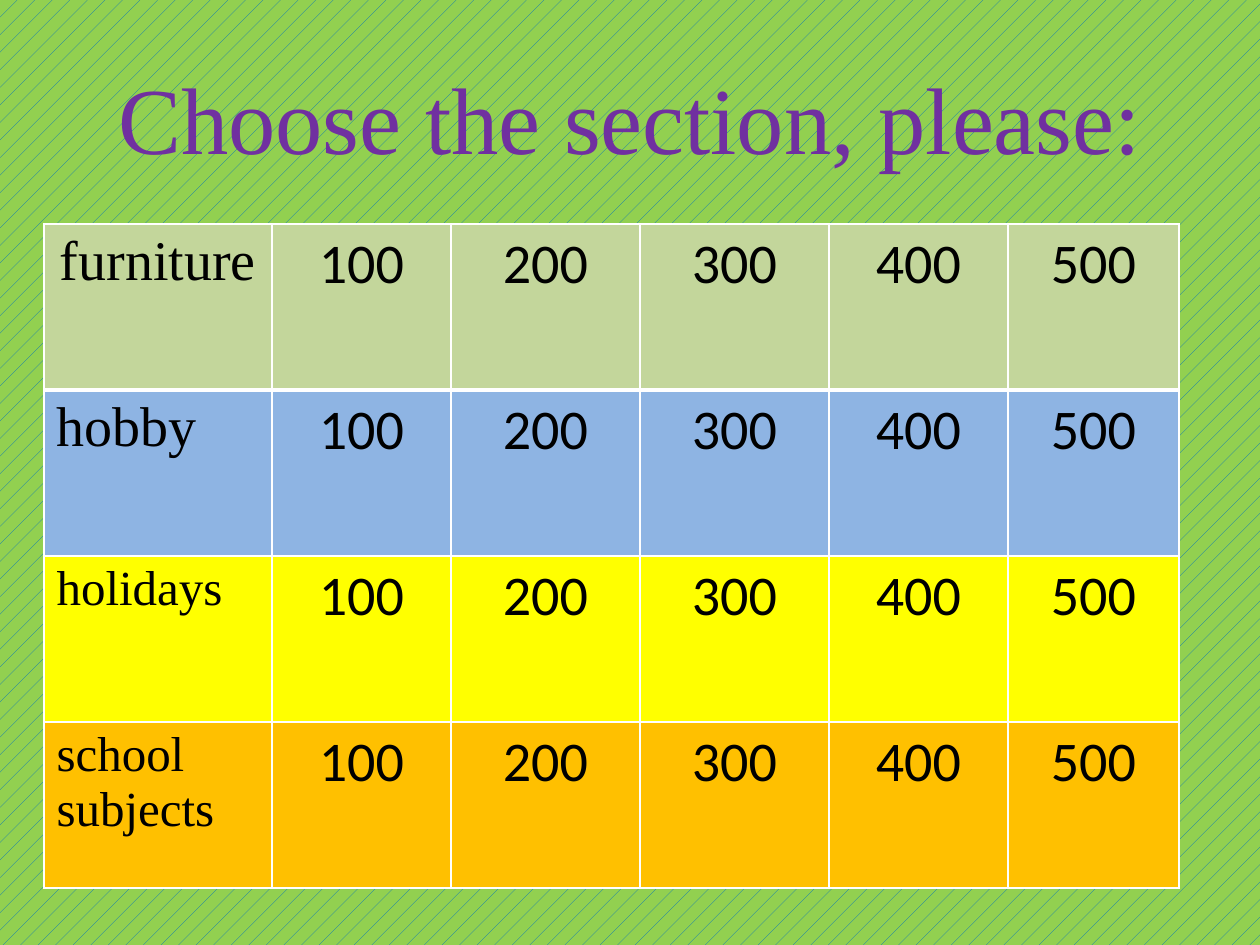
from dataclasses import dataclass

from lxml.etree import SubElement
from pptx import Presentation
from pptx.dml.color import RGBColor
from pptx.enum.dml import MSO_PATTERN
from pptx.enum.text import MSO_ANCHOR, PP_ALIGN
from pptx.oxml.ns import qn
from pptx.util import Emu, Pt

EMU_PER_PX = 914400 / 126


@dataclass(frozen=True)
class Theme:
    serif: str = "Times New Roman"
    sans: str = "Calibri"
    title_size: int = 54
    large_size: int = 32
    small_size: int = 28
    title_color: str = "7030A0"
    text_color: str = "000000"
    border_color: str = "FFFFFF"
    back_color: str = "92D050"
    hatch_color: str = "0070C0"
    thin: int = 1
    thick: int = 3


THEME = Theme()
TITLE_BOX = (63, 38, 1134, 157)
BOARD_BOX = (44, 224, 1134, 664)
COLUMN_WIDTHS = (228, 179, 189, 189, 179, 171)
POINTS = ("100", "200", "300", "400", "500")
# Section name, type size, alignment, row colour
SECTIONS = (
    ("furniture", THEME.large_size, PP_ALIGN.CENTER, "C3D69B"),
    ("hobby", THEME.large_size, PP_ALIGN.LEFT, "8EB4E3"),
    ("holidays", THEME.small_size, PP_ALIGN.LEFT, "FFFF00"),
    ("school\nsubjects", THEME.small_size, PP_ALIGN.LEFT, "FFC000"),
)


def px(length):
    return Emu(round(length * EMU_PER_PX))


def write_text(frame, text, name, size, color, align):
    """Fill a frame, one paragraph to a line, in a single format."""
    frame.text = text
    font_format = {"name": name, "size": Pt(size), "bold": False}
    for para in frame.paragraphs:
        para.alignment = align
        for span in para.runs:
            for key, value in font_format.items():
                setattr(span.font, key, value)
            span.font.color.rgb = RGBColor.from_string(color)


def paint_background(page):
    fill = page.background.fill
    fill.patterned()
    fill.pattern = MSO_PATTERN.PERCENT_5
    fill.fore_color.rgb = RGBColor.from_string(THEME.hatch_color)
    fill.back_color.rgb = RGBColor.from_string(THEME.back_color)


def place_title(page, box, text):
    title = page.shapes.title
    for side, length in zip(("left", "top", "width", "height"), box):
        setattr(title, side, px(length))
    title.text_frame.vertical_anchor = MSO_ANCHOR.MIDDLE
    write_text(title.text_frame, text, THEME.serif, THEME.title_size,
               THEME.title_color, PP_ALIGN.CENTER)


def set_borders(cell, top, bottom):
    """Draw the four cell borders; call before the cell fill is set."""
    properties = cell._tc.get_or_add_tcPr()
    widths = {"lnL": THEME.thin, "lnR": THEME.thin, "lnT": top, "lnB": bottom}
    for tag, width in widths.items():
        line = SubElement(properties, qn(f"a:{tag}"), w=str(Pt(width)))
        fill = SubElement(line, qn("a:solidFill"))
        SubElement(fill, qn("a:srgbClr"), val=THEME.border_color)


def place_board(page, box):
    table = page.shapes.add_table(len(SECTIONS), len(COLUMN_WIDTHS),
                                  *map(px, box)).table
    table.first_row = table.horz_banding = False
    for column, width in zip(table.columns, COLUMN_WIDTHS):
        column.width = px(width)
    for index, (section, size, align, color) in enumerate(SECTIONS):
        row = table.rows[index]
        row.height = px(box[3] / len(SECTIONS))
        top = THEME.thick if index == 1 else THEME.thin
        bottom = THEME.thick if index == 0 else THEME.thin
        for cell, text in zip(row.cells, (section, *POINTS)):
            set_borders(cell, top, bottom)
            cell.fill.solid()
            cell.fill.fore_color.rgb = RGBColor.from_string(color)
            if text == section:
                style = (THEME.serif, size, THEME.text_color, align)
            else:
                style = (THEME.sans, THEME.large_size, THEME.text_color,
                         PP_ALIGN.CENTER)
            write_text(cell.text_frame, text, *style)


def main():
    deck = Presentation()
    deck.slide_width, deck.slide_height = px(1260), px(945)
    page = deck.slides.add_slide(deck.slide_layouts.get_by_name("Title Only"))
    paint_background(page)
    place_title(page, TITLE_BOX, "Choose the section, please:")
    place_board(page, BOARD_BOX)
    deck.save("out.pptx")


if __name__ == "__main__":
    main()
